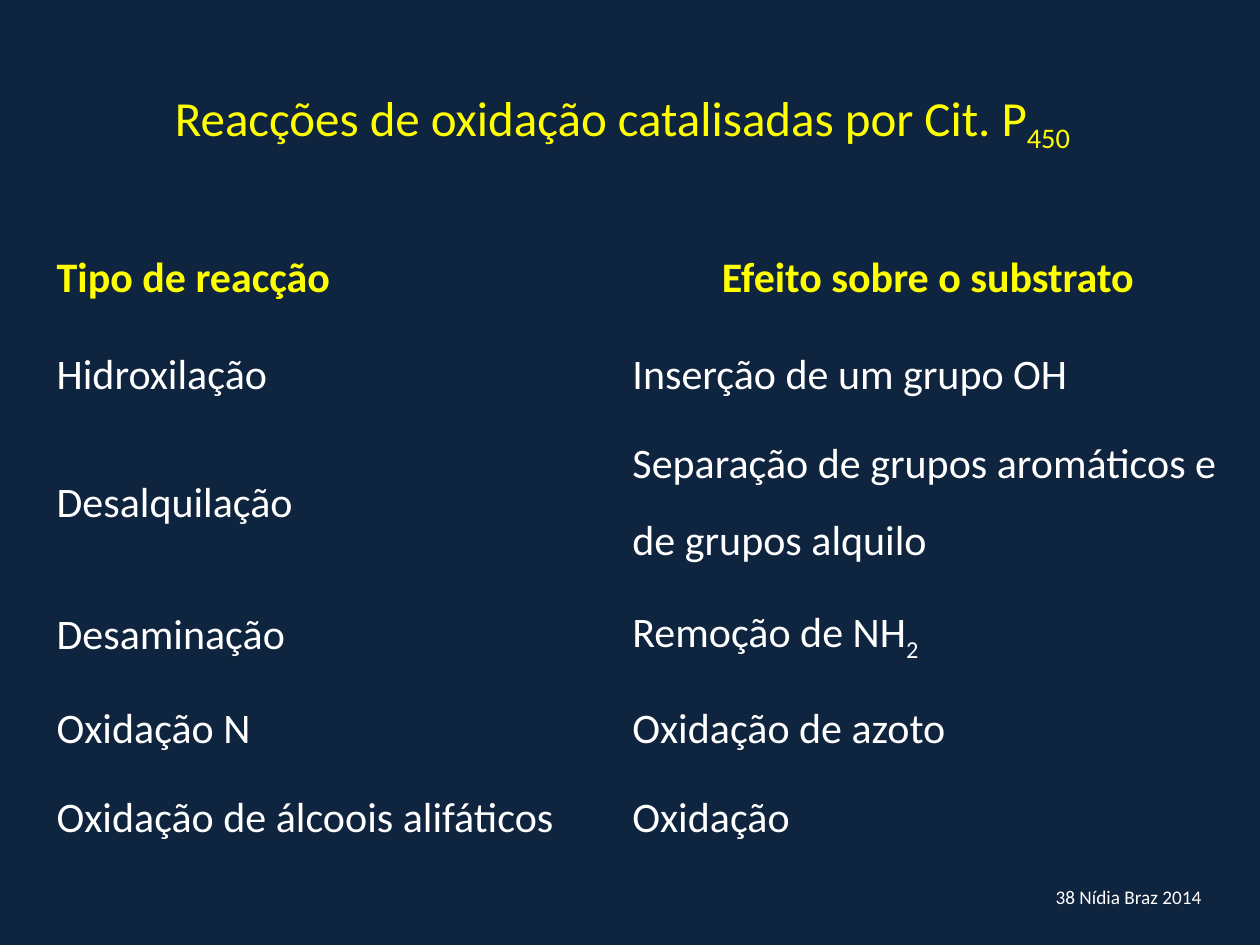
"""Build a slide with a table of oxidation reactions and their effects."""
from pptx import Presentation
from pptx import util as u
from pptx.dml import color
from pptx.enum import text

NAVY, GOLD, WHITE = "0F243E", "FFFF00", "FFFFFF"
TITLE = ["Reacções de oxidação catalisadas por Cit. P", "450"]
FOOT = ["38 Nídia Braz 2014 "]
ROWS = [
    (["Tipo de reacção"], ["Efeito sobre o substrato"]),
    (["Hidroxilação"], ["Inserção de um grupo OH"]),
    (["Desalquilação"],
     ["Separação de grupos aromáticos e de grupos alquilo"]),
    (["Desaminação"], ["Remoção de NH", "2"]),
    (["Oxidação N"], ["Oxidação de azoto"]),
    (["Oxidação de álcoois alifáticos"], ["Oxidação"]),
]
WIDTHS = [4.57, 4.89]
HEIGHTS = [0.82, 0.67, 1.27, 0.63, 0.63, 0.63]
NO_GRID = "{2D5ABB26-0587-4C30-8999-92F81FD0307C}"
MID = text.PP_ALIGN.CENTER


def paint(fill, tone):
    fill.solid()
    fill.fore_color.rgb = color.RGBColor.from_string(tone)


def write(frame, parts, size, tone, bold=False, align=text.PP_ALIGN.LEFT):
    """Write the first part as plain text and any later part as subscript."""
    para = frame.paragraphs[0]
    para.alignment = align
    for i, part in enumerate(parts):
        run = para.add_run()
        run.text = part
        font = run.font
        font.name, font.size, font.bold = "Calibri", u.Pt(size), bold
        paint(font.fill, tone)
        if i:
            run._r.get_or_add_rPr().set("baseline", "-25000")
    return para


def place(shape, *box):
    shape.left, shape.top, shape.width, shape.height = map(u.Inches, box)


def add_grid(slide):
    grid = slide.shapes.add_table(
        len(ROWS), len(WIDTHS), u.Inches(0.35), u.Inches(1.7),
        u.Inches(sum(WIDTHS)), u.Inches(sum(HEIGHTS))).table
    grid.first_row = grid.horz_banding = False
    grid._tbl.tblPr[0].text = NO_GRID
    for col, wide in zip(grid.columns, WIDTHS):
        col.width = u.Inches(wide)
    for r, (row, high) in enumerate(zip(ROWS, HEIGHTS)):
        grid.rows[r].height = u.Inches(high)
        head = r == 0
        for c, parts in enumerate(row):
            cell = grid.cell(r, c)
            cell.fill.background()
            cell.vertical_anchor = text.MSO_ANCHOR.MIDDLE
            para = write(cell.text_frame, parts, 24,
                         GOLD if head else WHITE, head,
                         MID if head and c else text.PP_ALIGN.LEFT)
            para.line_spacing = 1.5
            para.space_before = para.space_after = u.Pt(6)


def main():
    deck = Presentation()
    deck.slide_width, deck.slide_height = u.Inches(10), u.Inches(7.5)
    slide = deck.slides.add_slide(deck.slide_layouts[5])
    paint(slide.background.fill, NAVY)

    title = slide.shapes.title
    place(title, 0.7, 0.52, 8.48, 0.88)
    title.text_frame.auto_size = text.MSO_AUTO_SIZE.NONE
    write(title.text_frame, TITLE, 28, GOLD, align=MID)

    add_grid(slide)

    foot = slide.shapes.add_textbox(0, 0, 0, 0)
    place(foot, 8.15, 6.98, 1.65, 0.29)
    foot.text_frame.word_wrap = True
    write(foot.text_frame, FOOT, 11, WHITE, align=MID)
    deck.save("out.pptx")


if __name__ == "__main__":
    main()
